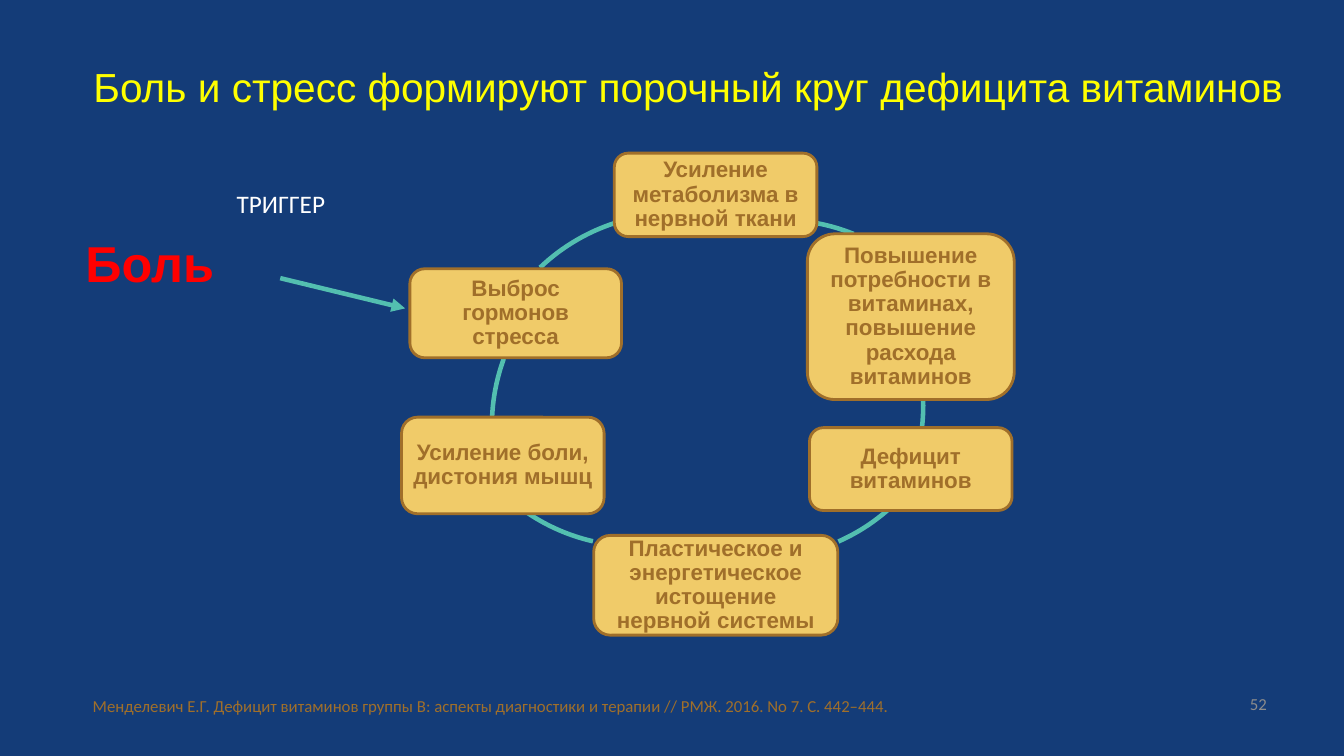
from lxml import etree
from pptx import Presentation
from pptx import util as u
from pptx.dml.color import RGBColor
from pptx.enum import shapes, text
from pptx.oxml.ns import qn

Pt = u.Pt
NAVY, GOLD, BROWN, TEAL = "143C78", "F0CB69", "A06F2A", "53BFB0"


def paint(color_format, color):
    color_format.rgb = RGBColor.from_string(color)


def write(frame, words, size, font, color, bold=False, align=text.PP_ALIGN.LEFT):
    """Put one formatted run into a wrapping text frame."""
    frame.word_wrap = True
    paragraph = frame.paragraphs[0]
    paragraph.alignment = align
    run = paragraph.add_run()
    run.text = words
    run.font.size = Pt(size)
    run.font.name = font
    run.font.bold = bold
    paint(run.font.color, color)
    return paragraph


presentation = Presentation()
presentation.slide_width = Pt(960)
presentation.slide_height = Pt(540)
slide = presentation.slides.add_slide(presentation.slide_layouts[6])
slide.background.fill.solid()
paint(slide.background.fill.fore_color, NAVY)

# Left and top of each circle, then the degrees between which its arc runs
CIRCLE = Pt(278.6)
arcs = [
    (418.3, 157, 280.9, 292),
    (380.9, 150.5, 358.4, 6.3),
    (403.2, 120.2, 49, 66.1),
    (315.4, 111.6, 102.9, 123.9),
    (351.4, 164.9, 182.8, 200.1),
    (342.7, 152.6, 226.3, 251.8),
]
for left, top, *angles in arcs:
    arc = slide.shapes.add_shape(
        shapes.MSO_SHAPE.ARC, Pt(left), Pt(top), CIRCLE, CIRCLE)
    for number, angle in enumerate(angles):
        arc.adjustments[number] = angle * 0.6
    arc.shadow.inherit = False
    arc.fill.background()
    paint(arc.line.color, TEAL)
    arc.line.width = Pt(3.25)

stages = [
    ("Усиление метаболизма в нервной ткани", 438.8, 109.4, 144.7, 59.6),
    ("Повышение потребности в витаминах, повышение расхода витаминов",
     576.7, 167, 147.8, 118.4),
    ("Дефицит витаминов", 578.2, 305.5, 144.7, 59.2),
    ("Пластическое и энергетическое истощение нервной системы",
     424.1, 382.4, 174.4, 71.3),
    ("Усиление боли, дистония мышц", 286.8, 298, 144.7, 69),
    ("Выброс гормонов стресса", 292.8, 192, 151.2, 63.6),
]
for words, *place in stages:
    stage = slide.shapes.add_shape(
        shapes.MSO_SHAPE.ROUNDED_RECTANGLE, *[Pt(length) for length in place])
    stage.shadow.inherit = False
    stage.fill.solid()
    paint(stage.fill.fore_color, GOLD)
    paint(stage.line.color, BROWN)
    stage.line.width = Pt(2)
    frame = stage.text_frame
    frame.margin_left = frame.margin_right = Pt(4.9)
    frame.margin_top = frame.margin_bottom = Pt(4.9)
    frame.vertical_anchor = text.MSO_ANCHOR.MIDDLE
    paragraph = write(frame, words, 16, "Arial", BROWN, True, text.PP_ALIGN.CENTER)
    paragraph.line_spacing = 0.9

LEFT, RIGHT = text.PP_ALIGN.LEFT, text.PP_ALIGN.RIGHT
labels = [
    ("Боль и стресс формируют порочный круг дефицита витаминов",
     (59.6, 41, 877.7, 42.5), 29, "Arial", "FFFF00", False, LEFT),
    ("ТРИГГЕР", (162, 131, 127.4, 28.8), 18, "Calibri", "FFFFFF", False, LEFT),
    ("Боль", (54, 162.4, 146.2, 51.1), 36, "Arial", "FF0000", True, LEFT),
    ("Менделевич Е.Г. Дефицит витаминов группы В: аспекты диагностики и терапии "
     "// РМЖ. 2016. No 7. С. 442–444.",
     (59.2, 493.2, 688.3, 24), 12, "Calibri", BROWN, False, LEFT),
    ("52", (688.1, 491.8, 223.9, 37.4), 12, "Calibri", "8C8C8C", False, RIGHT),
]
for words, place, *style in labels:
    label = slide.shapes.add_textbox(*[Pt(length) for length in place])
    write(label.text_frame, words, *style)

trigger_arrow = slide.shapes.add_connector(
    shapes.MSO_CONNECTOR.STRAIGHT, Pt(200.2), Pt(198.7), Pt(289.4), Pt(220.3))
paint(trigger_arrow.line.color, TEAL)
trigger_arrow.line.width = Pt(3.25)
etree.SubElement(trigger_arrow.line._get_or_add_ln(), qn("a:tailEnd"), type="triangle")
etree.SubElement(trigger_arrow.element.spPr, qn("a:effectLst"))

presentation.save("out.pptx")
